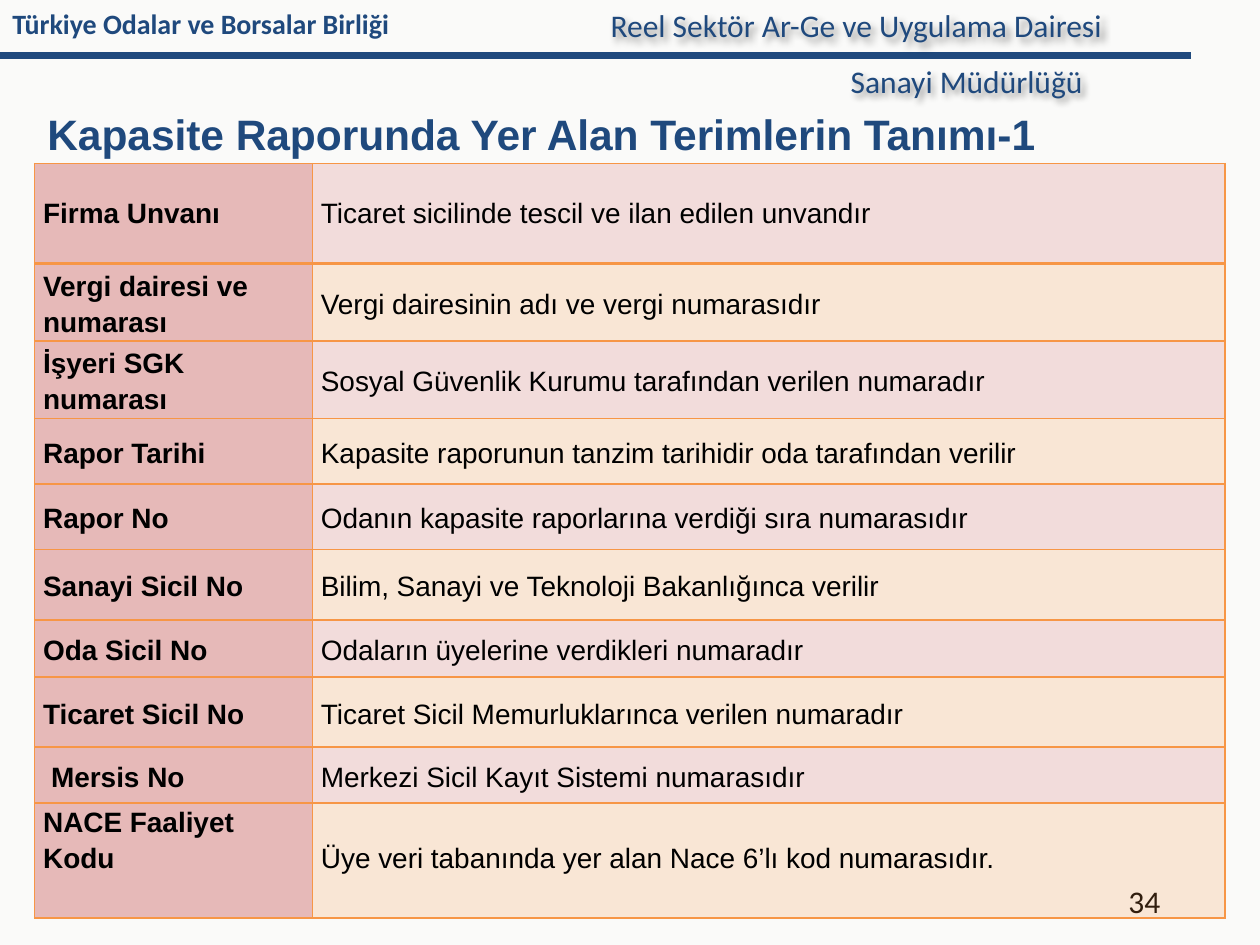
from lxml.etree import SubElement
from pptx import Presentation
from pptx.dml.color import RGBColor
from pptx.enum.text import MSO_ANCHOR, MSO_AUTO_SIZE, PP_ALIGN
from pptx.oxml import parse_xml
from pptx.oxml.ns import nsdecls, qn
from pptx.util import Cm, Pt

THEME = {
    "background": "FAFAF9", "navy": "1F497D", "black": "000000",
    "label": "E6B9B8", "pink": "F2DCDB", "orange": "F79646",
    "heading": "Arial", "header": "Calibri",
    "title_size": 24.3, "header_size": 18, "owner_size": 16, "table_size": 16,
}

TITLE = "Kapasite Raporunda Yer Alan Terimlerin Tanımı-1"

# text, (left, top, width, height) in cm, size, colour, bold, shadow
HEADER_TEXTS = [
    ("Türkiye Odalar ve Borsalar Birliği", (0, 0, 20.7, 0.94), "owner_size", "navy", True, False),
    ("Reel Sektör Ar-Ge ve Uygulama Dairesi", (12.06, 0, 11.2, 1.02), "header_size", "navy", False, True),
    ("Sanayi Müdürlüğü", (16.9, 1.12, 6.37, 1.02), "header_size", "navy", False, True),
    ("34", (22.5, 17.65, 1.63, 1.02), "header_size", "black", False, False),
]

# term, definition, row height in cm
TERMS = [
    ("Firma Unvanı", "Ticaret sicilinde tescil ve ilan edilen unvandır", 2.02),
    ("Vergi dairesi ve numarası", "Vergi dairesinin adı ve vergi numarasıdır", 1.55),
    ("İşyeri SGK numarası", "Sosyal Güvenlik Kurumu tarafından verilen numaradır", 1.55),
    ("Rapor Tarihi", "Kapasite raporunun tanzim tarihidir oda tarafından verilir", 1.32),
    ("Rapor No", "Odanın kapasite raporlarına verdiği sıra numarasıdır", 1.32),
    ("Sanayi Sicil No", "Bilim, Sanayi ve Teknoloji Bakanlığınca verilir", 1.42),
    ("Oda Sicil No", "Odaların üyelerine verdikleri numaradır", 1.15),
    ("Ticaret Sicil No", "Ticaret Sicil Memurluklarınca verilen numaradır", 1.42),
    ("Mersis No", "Merkezi Sicil Kayıt Sistemi numarasıdır", 1.12),
    ("NACE Faaliyet Kodu", "Üye veri tabanında yer alan Nace 6’lı kod numarasıdır.", 2.32),
]
TABLE_AT = (0.7, 3.3)
COLUMNS = (5.6, 18.4)
CELL_MARGIN = 0.17
INDENTED_TERM = "Mersis No"


def color(name):
    return RGBColor.from_string(THEME[name])


def add_run(p, text, font, size, ink, bold=False):
    r = p.add_run()
    r.text = text
    r.font.name = THEME[font]
    r.font.size = Pt(THEME[size])
    r.font.bold = bold
    r.font.color.rgb = color(ink)


def add_soft_shadow(sp):
    sp._element.spPr.append(parse_xml(
        f'<a:effectLst {nsdecls("a")}><a:outerShdw blurRad="50800" dist="38100" '
        'dir="2700000" algn="tl" rotWithShape="0"><a:srgbClr val="000000">'
        '<a:alpha val="40000"/></a:srgbClr></a:outerShdw></a:effectLst>'))


def add_header(s):
    line = s.shapes.add_connector(1, 0, Cm(1.12), Cm(24), Cm(1.12))
    line.line.color.rgb = color("navy")
    line.line.width = Pt(4)
    SubElement(line._element.spPr, qn("a:effectLst"))
    for text, box, size, ink, bold, shadow in HEADER_TEXTS:
        sp = s.shapes.add_textbox(*map(Cm, box))
        sp.text_frame.word_wrap = True
        add_run(sp.text_frame.paragraphs[0], text, "header", size, ink, bold)
        if shadow:
            add_soft_shadow(sp)


def add_title(s):
    sp = s.shapes.title
    sp.left, sp.top, sp.width, sp.height = map(Cm, (0.7, 2.1, 23.5, 1.2))
    tf = sp.text_frame
    tf.auto_size = MSO_AUTO_SIZE.NONE
    tf.vertical_anchor = MSO_ANCHOR.MIDDLE
    p = tf.paragraphs[0]
    p.alignment = PP_ALIGN.LEFT
    add_run(p, TITLE, "heading", "title_size", "navy", True)


def set_borders(cell, widths):
    tc_pr = cell._tc.get_or_add_tcPr()
    for i, (side, width) in enumerate(widths.items()):
        tc_pr.insert(i, parse_xml(
            f'<a:ln{side} {nsdecls("a")} w="{Pt(width)}"><a:solidFill>'
            f'<a:srgbClr val="{THEME["orange"]}"/></a:solidFill></a:ln{side}>'))


def fill_cell(cell, ink, opacity=100):
    cell.fill.solid()
    cell.fill.fore_color.rgb = color(ink)
    if opacity < 100:
        clr = cell._tc.tcPr.find(qn("a:solidFill"))[0]
        SubElement(clr, qn("a:alpha"), val=str(opacity * 1000))


def add_terms_table(s):
    height = sum(row[2] for row in TERMS)
    table = s.shapes.add_table(len(TERMS), len(COLUMNS), *map(Cm, (*TABLE_AT, sum(COLUMNS), height))).table
    table.first_row = table.horz_banding = False
    for column, width in zip(table.columns, COLUMNS):
        column.width = Cm(width)
    last = len(TERMS) - 1
    for i, (term, definition, row_height) in enumerate(TERMS):
        table.rows[i].height = Cm(row_height)
        for j, text in enumerate((term, definition)):
            cell = table.cell(i, j)
            cell.margin_left = cell.margin_right = Cm(CELL_MARGIN)
            cell.margin_top = cell.margin_bottom = 0
            cell.vertical_anchor = MSO_ANCHOR.TOP if i == last else MSO_ANCHOR.MIDDLE
            if text == INDENTED_TERM:
                cell.margin_left = Cm(CELL_MARGIN + 0.16)
            p = cell.text_frame.paragraphs[0]
            p.alignment = PP_ALIGN.JUSTIFY if j else PP_ALIGN.LEFT
            p.line_spacing = 1.15 if i else 1.0
            add_run(p, text, "heading", "table_size", "black", j == 0)
            if j == 0:
                fill_cell(cell, "label")
            elif i % 2:
                fill_cell(cell, "orange", 20)
            else:
                fill_cell(cell, "pink")
            set_borders(cell, {"L": 1, "R": 1, "T": 2 if i == 1 else 1, "B": 1 if i else 2})
    table.cell(last, 1).margin_top = Cm(0.72)


def main():
    prs = Presentation()
    prs.slide_width, prs.slide_height = Cm(25.4), Cm(19.05)
    s = prs.slides.add_slide(prs.slide_layouts[5])
    s.background.fill.solid()
    s.background.fill.fore_color.rgb = color("background")
    add_header(s)
    add_title(s)
    add_terms_table(s)
    prs.save("out.pptx")


if __name__ == "__main__":
    main()
